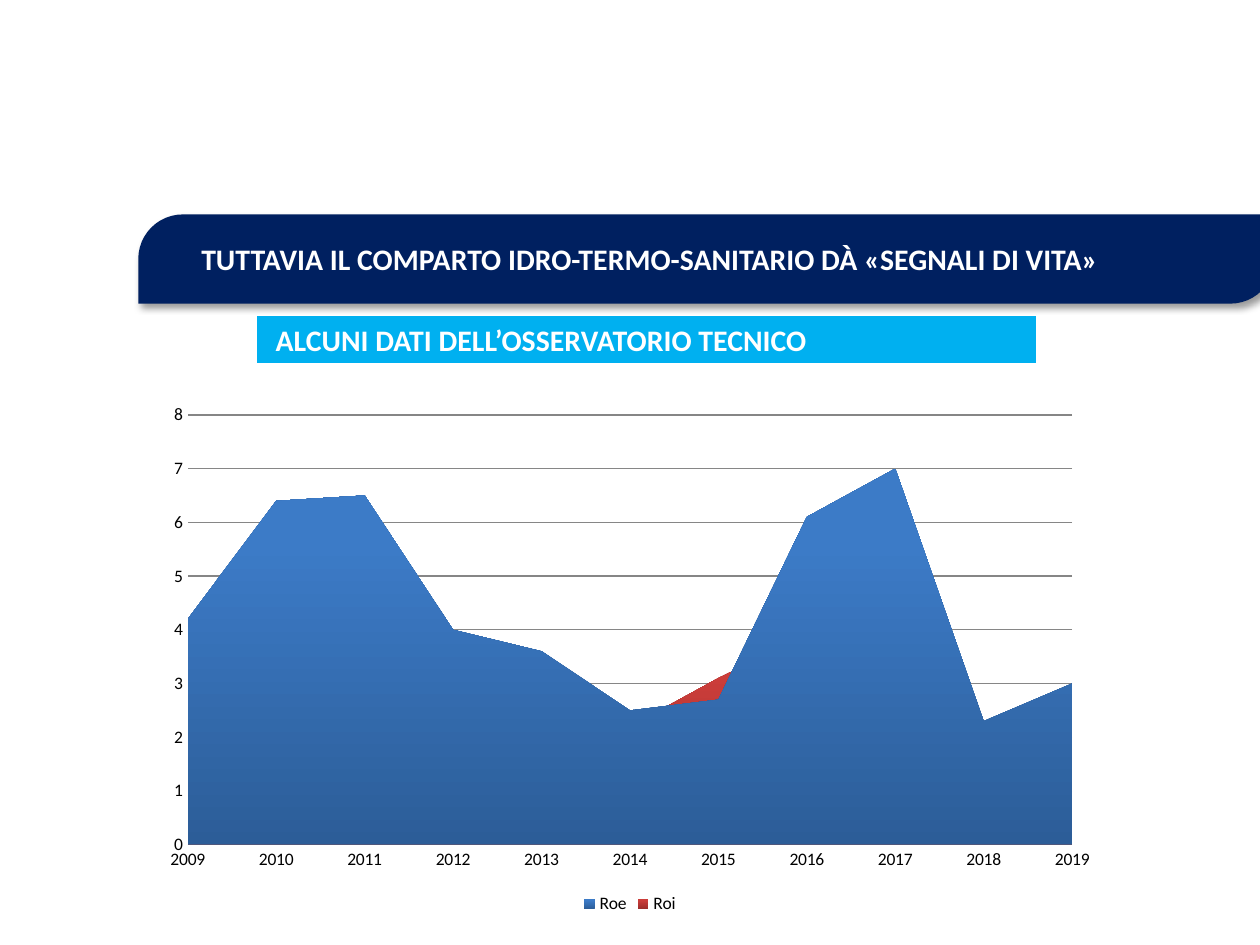
from lxml import etree
from pptx import Presentation
from pptx.chart.data import CategoryChartData
from pptx.dml.color import RGBColor
from pptx.enum.chart import XL_CHART_TYPE, XL_LEGEND_POSITION, XL_TICK_MARK
from pptx.enum.shapes import MSO_SHAPE
from pptx.enum.text import MSO_ANCHOR, MSO_AUTO_SIZE, PP_ALIGN
from pptx.oxml import parse_xml
from pptx.oxml.ns import nsdecls
from pptx.util import Pt

AREA = XL_CHART_TYPE.AREA
BOTTOM = XL_LEGEND_POSITION.BOTTOM
NO_TICK = XL_TICK_MARK.NONE
RECT, DIAG = MSO_SHAPE.RECTANGLE, MSO_SHAPE.ROUND_2_DIAG_RECTANGLE
MIDDLE, FIXED, LEFT = MSO_ANCHOR.MIDDLE, MSO_AUTO_SIZE.NONE, PP_ALIGN.LEFT
HEX = {"navy": "002060", "sky": "00B0F0", "white": "FFFFFF", "black": "000000",
       "grid": "868686"}
RGB = {name: RGBColor.from_string(code) for name, code in HEX.items()}
FADES = {"Roe": ("2C5D98", "3C7BC7"), "Roi": ("9B2D2A", "CB3D3A")}


def style(item, values):
    for name, value in values.items():
        setattr(item, name, value)


def write(shape, text, inset):
    frame = shape.text_frame
    style(frame, {"text": text, "word_wrap": True, "auto_size": FIXED,
                  "vertical_anchor": MIDDLE, "margin_left": Pt(inset),
                  "margin_right": Pt(6), "margin_top": Pt(3), "margin_bottom": Pt(3)})
    line = frame.paragraphs[0]
    line.alignment = LEFT
    style(line.font, {"name": "Calibri", "size": Pt(17), "bold": True})
    line.font.color.rgb = RGB["white"]


deck = Presentation()
style(deck, {"slide_width": Pt(720), "slide_height": Pt(540)})
slide = deck.slides.add_slide(deck.slide_layouts[5])
shapes = slide.shapes

label = shapes.add_shape(RECT, Pt(146.5), Pt(180), Pt(446), Pt(28))
label.shadow.inherit = False
label.fill.solid()
label.fill.fore_color.rgb = RGB["sky"]
label.line.color.rgb = RGB["white"]
label.line.width = Pt(0.75)
write(label, "ALCUNI DATI DELL’OSSERVATORIO TECNICO", 11)

data = CategoryChartData()
data.categories = [str(year) for year in range(2009, 2020)]
data.add_series("Roe", (4.2, 6.4, 6.5, 4, 3.6, 2.5, 2.7, 6.1, 7, 2.3, 3))
data.add_series("Roi", (3.3, 3.9, 3.6, 2.5, 2.8, 2.2, 3.1, 3.9, 3.7, 2.2, 2.6))
chart = shapes.add_chart(AREA, Pt(86.5), Pt(225.5), Pt(547), Pt(299.5), data).chart
style(chart, {"has_title": False, "has_legend": True})
style(chart.font, {"name": "Calibri", "size": Pt(10)})
chart.font.color.rgb = RGB["black"]
style(chart.legend, {"position": BOTTOM, "include_in_layout": False})
chart.plots[0].vary_by_categories = False

for series in chart.plots[0].series:
    fill = series.format.fill
    fill.gradient()
    fill.gradient_angle = 90
    for stop, code, place in zip(fill.gradient_stops, FADES[series.name], (0, 0.8)):
        stop.color.rgb = RGBColor.from_string(code)
        stop.position = place

years, scale = chart.category_axis, chart.value_axis
for axis in (years, scale):
    style(axis, {"major_tick_mark": NO_TICK, "minor_tick_mark": NO_TICK})
style(scale, {"minimum_scale": 0, "maximum_scale": 8, "major_unit": 1,
              "has_major_gridlines": True})
scale.format.line.fill.background()
years.has_major_gridlines = False
for line in (years.format.line, scale.major_gridlines.format.line):
    line.color.rgb = RGB["grid"]
    line.width = Pt(0.75)

banner = shapes.add_shape(DIAG, Pt(79), Pt(122.5), Pt(649.5), Pt(51))
banner.adjustments[0] = 0.5
banner.fill.solid()
banner.fill.fore_color.rgb = RGB["navy"]
banner.line.fill.background()
banner.shadow.inherit = False
effects = banner._element.spPr[-1]
shade = parse_xml(
    f'<a:outerShdw {nsdecls("a")} blurRad="{Pt(4)}" dist="{Pt(3)}" dir="2700000" '
    'algn="tl" rotWithShape="0"/>')
tone = etree.SubElement(shade, effects.tag.replace("effectLst", "srgbClr"), val=HEX["black"])
etree.SubElement(tone, effects.tag.replace("effectLst", "alpha"), val="40000")
effects.append(shade)

title = shapes.title
style(title, {"left": banner.left, "top": banner.top,
              "width": banner.width, "height": banner.height})
write(title, "TUTTAVIA IL COMPARTO IDRO-TERMO-SANITARIO DÀ «SEGNALI DI VITA»", 36)
banner._element.addnext(title._element)

deck.save("out.pptx")
